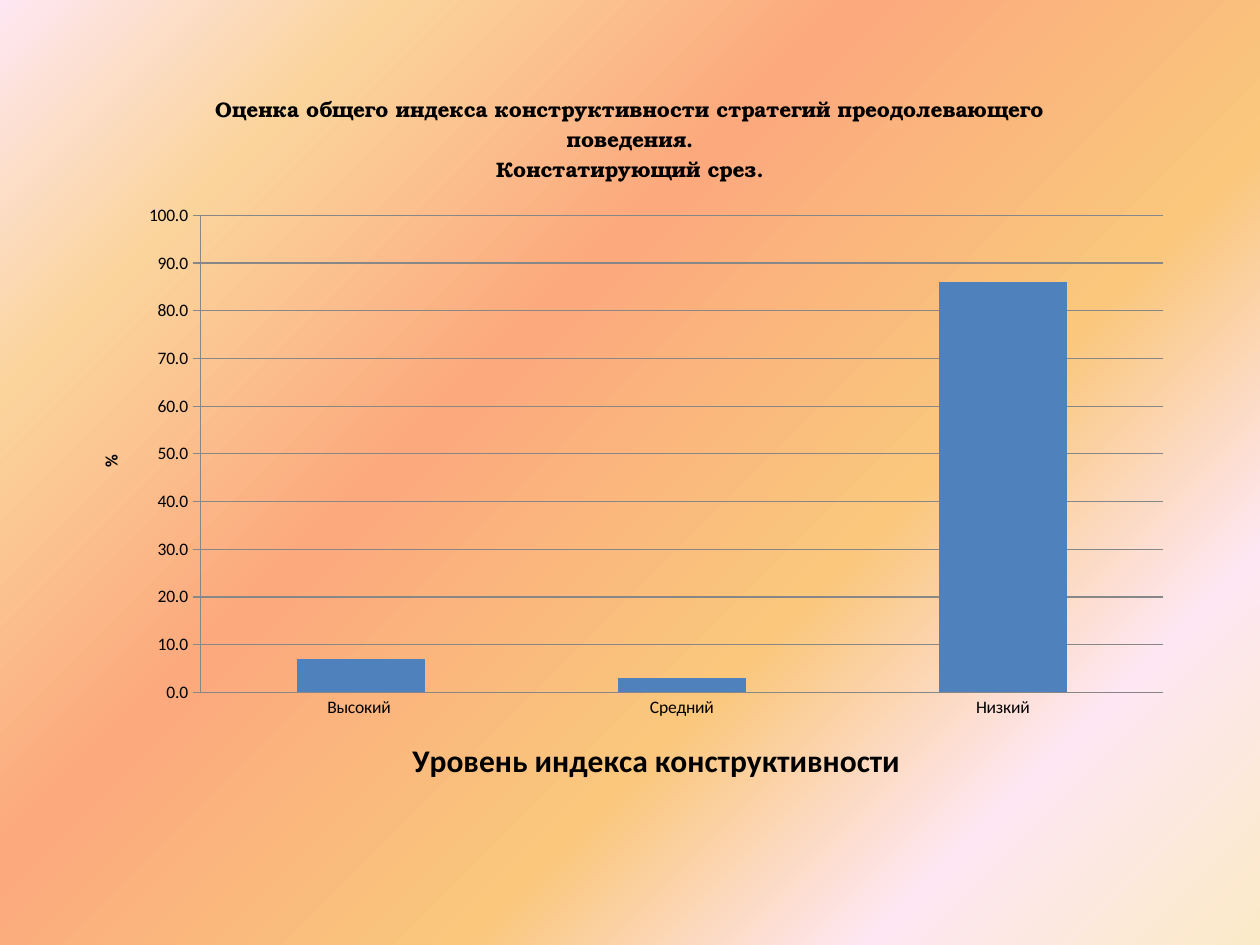
from lxml.etree import SubElement, Element
from pptx import Presentation
from pptx.chart.data import CategoryChartData
from pptx.dml.color import RGBColor
from pptx.enum.chart import XL_CHART_TYPE as ChartType, XL_TICK_MARK as TickMark
from pptx.oxml import parse_xml
from pptx.oxml.ns import nsdecls, qn
from pptx.util import Pt

COLORS = {"text": "000000", "bar": "4F81BD", "line": "878787"}
BACKGROUND_STOPS = [(0, "FBEAC7"), (18, "FEE7F2"), (36, "FAC77D"),
                    (61, "FBA97D"), (82, "FBD49C"), (100, "FEE7F2")]
BODY_FONT, TITLE_FONT = "Calibri", "TeX Gyre Bonum"
CHART_WIDTH, CHART_HEIGHT = 635, 425.5


def place(element, x, y, w=None, h=None):
    """Set a manual layout, given in points from the chart's top left corner."""
    for old in element.findall(qn("c:layout")):
        element.remove(old)
    settings = {"xMode": "edge", "yMode": "edge", "x": x / CHART_WIDTH, "y": y / CHART_HEIGHT}
    if w and h:
        settings = {"layoutTarget": "inner", **settings,
                    "w": w / CHART_WIDTH, "h": h / CHART_HEIGHT}
    layout = Element(qn("c:layout"))
    manual = SubElement(layout, qn("c:manualLayout"))
    for name, value in settings.items():
        SubElement(manual, qn(f"c:{name}")).set("val", str(value))
    element.insert(0 if element.find(qn("c:tx")) is None else 1, layout)


def write_title(text_frame, lines, size, font_name):
    for index, line in enumerate(lines):
        paragraph = text_frame.paragraphs[0] if index == 0 else text_frame.add_paragraph()
        run = paragraph.add_run()
        run.text = line
        for name, value in {"size": Pt(size), "bold": True, "name": font_name}.items():
            setattr(run.font, name, value)
        run.font.color.rgb = RGBColor.from_string(COLORS["text"])


presentation = Presentation()
presentation.slide_width, presentation.slide_height = Pt(720), Pt(540)
slide = presentation.slides.add_slide(presentation.slide_layouts[6])

# Background gradient spreading from the lower right corner
stops = "".join(f'<a:gs pos="{position * 1000}"><a:srgbClr val="{color}"/></a:gs>'
                for position, color in BACKGROUND_STOPS)
slide.background.fill.solid()
background = slide.element.find(".//" + qn("p:bgPr"))
background.replace(background[0], parse_xml(
    f'<a:gradFill {nsdecls("a")} rotWithShape="1"><a:gsLst>{stops}</a:gsLst>'
    '<a:path path="circle"><a:fillToRect l="100000" t="100000"/></a:path></a:gradFill>'))

# Column chart
chart_data = CategoryChartData(number_format="0.0")
chart_data.categories = ["Высокий ", "Средний", "Низкий"]
chart_data.add_series("Series 1", [7, 3, 86])
chart = slide.shapes.add_chart(ChartType.COLUMN_CLUSTERED, Pt(42.5), Pt(37.5),
                               Pt(CHART_WIDTH), Pt(CHART_HEIGHT), chart_data).chart
chart.has_legend = False
chart.font.size, chart.font.name = Pt(10), BODY_FONT
chart.font.color.rgb = RGBColor.from_string(COLORS["text"])

plot = chart.plots[0]
plot.gap_width, plot.vary_by_categories = 150, False
bar_fill = plot.series[0].format.fill
bar_fill.solid()
bar_fill.fore_color.rgb = RGBColor.from_string(COLORS["bar"])

value_axis, category_axis = chart.value_axis, chart.category_axis
value_axis.minimum_scale, value_axis.maximum_scale, value_axis.major_unit = 0, 100, 10
value_axis.has_major_gridlines = True
value_axis.major_tick_mark = TickMark.CROSS
value_axis.tick_labels.number_format = "0.0"
value_axis.tick_labels.number_format_is_linked = False
category_axis.major_tick_mark = TickMark.NONE
for part in (value_axis, category_axis, value_axis.major_gridlines):
    part.format.line.width = Pt(0.75)
    part.format.line.color.rgb = RGBColor.from_string(COLORS["line"])

# Titles and positions inside the chart
write_title(chart.chart_title.text_frame,
            ["Оценка общего индекса конструктивности стратегий преодолевающего поведения.",
             "Констатирующий срез."], 12, TITLE_FONT)
chart.chart_title.include_in_layout = False
for axis, text, size, x, y in [(category_axis, "Уровень индекса конструктивности", 18, 190, 381),
                               (value_axis, "%", 10, 12.7, 221)]:
    write_title(axis.axis_title.text_frame, [text], size, BODY_FONT)
    place(axis.axis_title._element, x, y)
value_title_body = value_axis.axis_title.text_frame._txBody.bodyPr
for name, value in {"rot": "-5400000", "vert": "horz"}.items():
    value_title_body.set(name, value)
place(chart._chartSpace.find(".//" + qn("c:plotArea")), 72, 85.6, 550.3, 272.6)

presentation.save("out.pptx")
